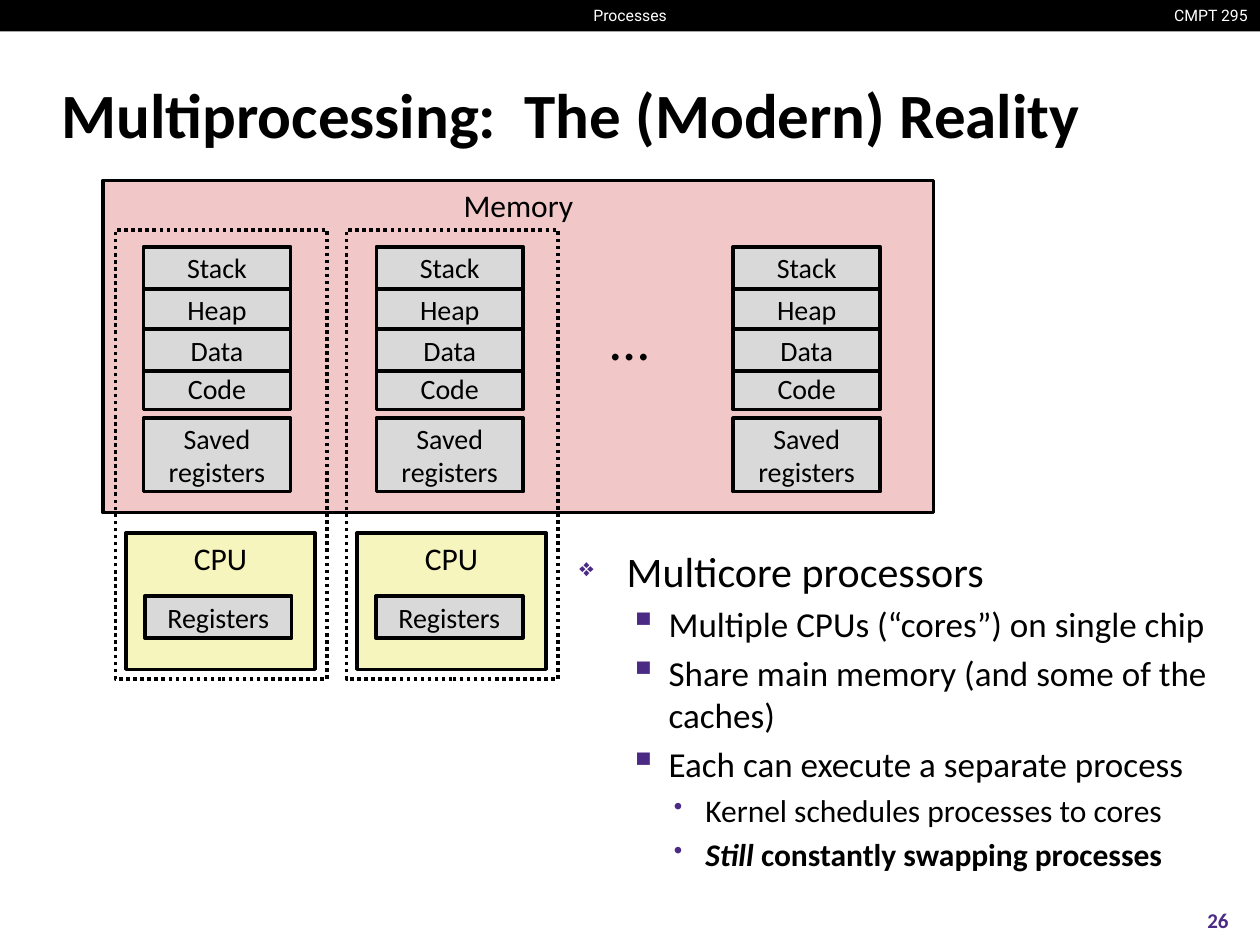
import dataclasses
import lxml.etree
import pptx
import pptx.dml.color
import pptx.enum.dml
import pptx.enum.shapes
import pptx.enum.text
import pptx.oxml.ns
import pptx.util

Pt = pptx.util.Pt
Align = pptx.enum.text.PP_ALIGN
Anchor = pptx.enum.text.MSO_ANCHOR


@dataclasses.dataclass
class Theme:
    ink: str = "000000"
    paper: str = "FFFFFF"
    accent: str = "4B2A85"
    memory: str = "F1C7C7"
    cell: str = "D9D9D9"
    core: str = "F6F5BD"
    font: str = "Calibri"
    strip: str = "Roboto"
    title: int = 36
    dots: int = 32
    head: int = 24
    body: int = 20
    label: int = 18
    block: int = 16
    page: int = 12
    small: int = 9


theme = Theme()
deck = pptx.Presentation()
deck.slide_width, deck.slide_height = Pt(720), Pt(540)
slide = deck.slides.add_slide(deck.slide_layouts[6])


def box(left, top, width, height, fill=None, line=True, dotted=False):
    """Add a rectangle and return it."""
    rect = slide.shapes.add_shape(pptx.enum.shapes.MSO_SHAPE.RECTANGLE,
                                  Pt(left), Pt(top), Pt(width), Pt(height))
    rect.shadow.inherit = False
    if fill:
        rect.fill.solid()
        rect.fill.fore_color.rgb = pptx.dml.color.RGBColor.from_string(fill)
    else:
        rect.fill.background()
    if line:
        rect.line.width = Pt(2)
        rect.line.color.rgb = pptx.dml.color.RGBColor.from_string(theme.ink)
        if dotted:
            rect.line.dash_style = pptx.enum.dml.MSO_LINE.ROUND_DOT
    else:
        rect.line.fill.background()
    return rect


def write(shape, text, size, font=theme.font, color=theme.ink, bold=False,
          italic=False, align=Align.CENTER, anchor=Anchor.MIDDLE, wrap=True,
          para=None):
    """Write a run into a shape, or add it to a given paragraph."""
    frame = shape.text_frame
    frame.word_wrap = wrap
    frame.vertical_anchor = anchor
    if para is None:
        para = frame.paragraphs[0]
        if para.runs:
            para = frame.add_paragraph()
        para.alignment = align
    run = para.add_run()
    run.text = text
    run.font.name, run.font.size = font, Pt(size)
    run.font.bold, run.font.italic = bold, italic
    run.font.color.rgb = pptx.dml.color.RGBColor.from_string(color)
    return para


# Header strip
box(0, 0, 720, 18, theme.ink, line=False)
for text, left, width, align in (("CMPT 295", 661.5, 58.5, Align.RIGHT),
                                 ("Processes", 331.5, 57, Align.CENTER)):
    note = slide.shapes.add_textbox(Pt(left), 0, Pt(width), Pt(18))
    write(note, text, theme.small, font=theme.strip, color=theme.paper,
          align=align, anchor=Anchor.TOP, wrap=False)

# Title
title = slide.shapes.add_textbox(Pt(28), Pt(34.5), Pt(662), Pt(60))
write(title, "Multiprocessing:  The (Modern) Reality", theme.title,
      bold=True, align=Align.LEFT)

# Memory with one stack of blocks per process
memory = box(59, 103, 474.5, 190, theme.memory)
write(memory, "Memory", theme.label, anchor=Anchor.TOP)
blocks = (("Stack", 141, 24), ("Heap", 165, 24), ("Code", 210, 24),
          ("Data", 188, 24), ("Saved registers", 239, 42))
for left in (82, 215, 419):
    for text, top, height in blocks:
        write(box(left, top, 84, height, theme.cell), text, theme.block)
dots = slide.shapes.add_textbox(Pt(342), Pt(170.5), Pt(37), Pt(46))
write(dots, "…", theme.dots, align=Align.LEFT, anchor=Anchor.TOP, wrap=False)

# Cores, each tied to its process by a dotted frame
for left in (72, 204):
    core = box(left, 304.5, 108, 78, theme.core)
    write(core, "CPU", theme.label, anchor=Anchor.TOP)
    write(box(left + 10.75, 340.5, 84, 24, theme.cell), "Registers",
          theme.block)
    box(left - 6, 131.5, 121, 256.5, dotted=True)

# Bullet list: mark, mark size, left margin, hanging indent, type size
levels = (("❖", 60, 27, 27, theme.head), ("▪", 110, 51, 22.5, theme.body),
          ("•", 80, 72, 18, theme.label))
points = ((0, "Multicore processors"),
          (1, "Multiple CPUs (“cores”) on single chip"),
          (1, "Share main memory (and some of the caches)"),
          (1, "Each can execute a separate process"),
          (2, "Kernel schedules processes to cores"),
          (2, "Still"))
body = slide.shapes.add_textbox(Pt(324), Pt(308), Pt(374.5), Pt(210))
qn = pptx.oxml.ns.qn
for level, text in points:
    mark, scale, margin, hang, size = levels[level]
    last = text == "Still"
    para = write(body, text, size, bold=last, italic=last, align=Align.LEFT,
                 anchor=Anchor.TOP)
    para.level = level
    para.space_before = Pt(size * 0.2)
    props = para._p.get_or_add_pPr()
    props.set("marL", str(int(Pt(margin))))
    props.set("indent", str(-int(Pt(hang))))
    tint = lxml.etree.SubElement(props, qn("a:buClr"))
    lxml.etree.SubElement(tint, qn("a:srgbClr"), val=theme.accent)
    lxml.etree.SubElement(props, qn("a:buSzPct"), val=str(scale * 1000))
    lxml.etree.SubElement(props, qn("a:buChar"), char=mark)
write(body, " constantly swapping processes", theme.label, bold=True,
      anchor=Anchor.TOP, para=para)

# Page number
page = slide.shapes.add_textbox(Pt(672), Pt(511), Pt(48), Pt(29))
write(page, "26", theme.page, color=theme.accent, bold=True)

deck.save("out.pptx")
